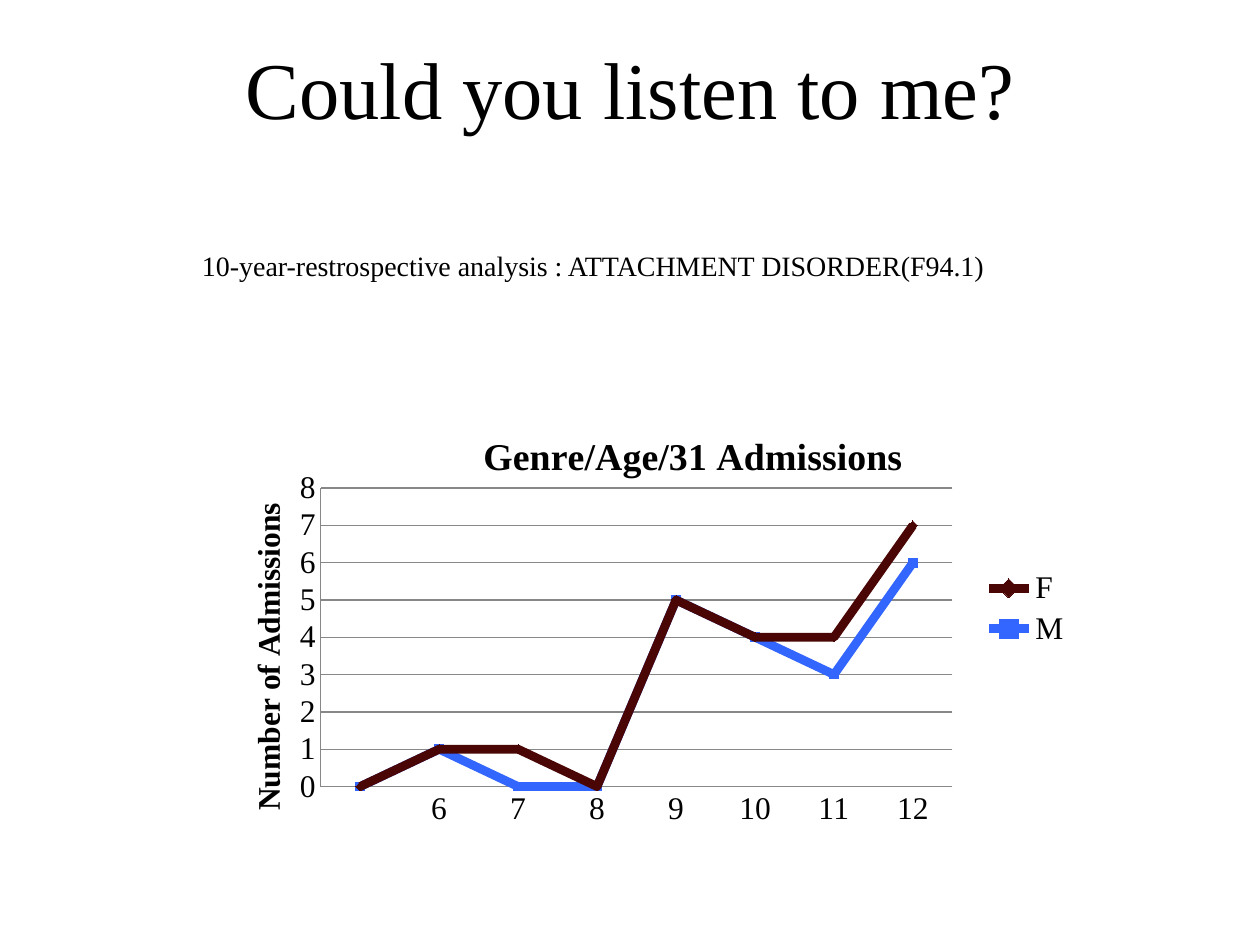
from pptx import Presentation
from pptx import util as u
from pptx.chart.data import CategoryChartData
from pptx.dml.color import RGBColor
from pptx.enum import chart as ch, text
from pptx.oxml import parse_xml
from pptx.oxml.ns import nsdecls, qn

# Content
HEADING = "Could you listen to me?"
ANALYSIS = "10-year-restrospective analysis : ATTACHMENT DISORDER(F94.1)"
CHART_TITLE = "Genre/Age/31 Admissions"
COUNT_TITLE = "Number of Admissions"
AGES = ["", "6", "7", "8", "9", "10", "11", "12"]
GENRES = [
    ("M", (0, 1, 0, 0, 5, 4, 3, 6), "3366FF", ch.XL_MARKER_STYLE.SQUARE),
    ("F", (0, 0, 1, 0, 0, 0, 1, 1), "4A0505", ch.XL_MARKER_STYLE.DIAMOND),
]
FONT, BLACK, GREY = "Times New Roman", "000000", "878787"


def rgb(hex_colour):
    return RGBColor.from_string(hex_colour)


def style_font(font, size, bold=False):
    font.name, font.size, font.bold = FONT, u.Pt(size), bold
    font.color.rgb = rgb(BLACK)


def style_line(line, colour, width):
    line.color.rgb = rgb(colour)
    line.width = u.Pt(width)


def place(shape, left, top, width, height):
    shape.left, shape.top = u.Cm(left), u.Cm(top)
    shape.width, shape.height = u.Cm(width), u.Cm(height)


def write(frame, words, size, bold=False):
    paragraph = frame.paragraphs[0]
    paragraph.alignment = text.PP_ALIGN.CENTER
    run = paragraph.add_run()
    run.text = words
    style_font(run.font, size, bold)


def write_centred(shape, words, size):
    frame = shape.text_frame
    frame.word_wrap = True
    frame.auto_size = text.MSO_AUTO_SIZE.NONE
    frame.vertical_anchor = text.MSO_ANCHOR.MIDDLE
    write(frame, words, size)


def set_layout(part, **fractions):
    """Fix a chart part at fractions of the chart's size."""
    for old in part.findall(qn("c:layout")):
        part.remove(old)
    modes = "".join(f'<c:{axis}Mode val="edge"/>' for axis in "xy")
    target = '<c:layoutTarget val="inner"/>' if "w" in fractions else ""
    sizes = "".join(f'<c:{k} val="{v}"/>' for k, v in fractions.items())
    layout = parse_xml(
        f'<c:layout {nsdecls("c")}><c:manualLayout>{target}{modes}{sizes}'
        "</c:manualLayout></c:layout>")
    leading = (qn("c:tx"), qn("c:legendPos"))
    part.insert(sum(child.tag in leading for child in part), layout)


prs = Presentation()
prs.slide_width, prs.slide_height = u.Cm(25.4), u.Cm(19.05)
slide = prs.slides.add_slide(prs.slide_layouts[5])

# Heading and subject
heading = slide.shapes.title
place(heading, 2.54, 0.56, 20.32, 2.41)
write_centred(heading, HEADING, 46)
analysis = slide.shapes.add_textbox(0, 0, 0, 0)
place(analysis, 1.8, 4.8, 20.32, 1.1)
write_centred(analysis, ANALYSIS, 16)

# Admissions chart
admissions = CategoryChartData()
admissions.categories = AGES
for genre, counts, _, _ in GENRES:
    admissions.add_series(genre, counts)
chart = slide.shapes.add_chart(
    ch.XL_CHART_TYPE.LINE_MARKERS_STACKED, u.Cm(4.37), u.Cm(7.65),
    u.Cm(17.45), u.Cm(9.12), admissions).chart
style_font(chart.font, 18)
chart.plots[0].vary_by_categories = False
for series, (_, _, colour, symbol) in zip(chart.plots[0].series, GENRES):
    series.smooth = False
    style_line(series.format.line, colour, 5)
    series.marker.style, series.marker.size = symbol, 5
    series.marker.format.fill.solid()
    series.marker.format.fill.fore_color.rgb = rgb(colour)
    style_line(series.marker.format.line, colour, 0.75)

# Axes
ages, counts = chart.category_axis, chart.value_axis
counts.minimum_scale, counts.maximum_scale, counts.major_unit = 0, 8, 1
counts.has_major_gridlines = True
style_line(counts.major_gridlines.format.line, GREY, 0.75)
for axis in (ages, counts):
    axis.major_tick_mark = axis.minor_tick_mark = ch.XL_TICK_MARK.NONE
    style_line(axis.format.line, GREY, 0.75)
    style_font(axis.tick_labels.font, 18)

# Titles and legend
chart.has_title = counts.has_title = True
write(chart.chart_title.text_frame, CHART_TITLE, 21.6, True)
write(counts.axis_title.text_frame, COUNT_TITLE, 18, True)
chart.has_legend = True
chart.legend.position = ch.XL_LEGEND_POSITION.RIGHT
chart.legend.include_in_layout = False
style_font(chart.legend.font, 18)

# Places inside the chart
for tag, fractions in (
    ("c:chart/c:title", dict(x=0.3, y=0.1)),
    ("c:chart/c:plotArea", dict(x=0.12, y=0.24, w=0.73, h=0.66)),
    ("c:chart/c:plotArea/c:valAx/c:title", dict(x=0.03, y=0.26)),
    ("c:chart/c:legend", dict(x=0.88, y=0.41)),
):
    set_layout(chart.element.xpath(tag)[0] if hasattr(chart, "element")
               else chart._chartSpace.xpath(tag)[0], **fractions)

prs.save("out.pptx")
